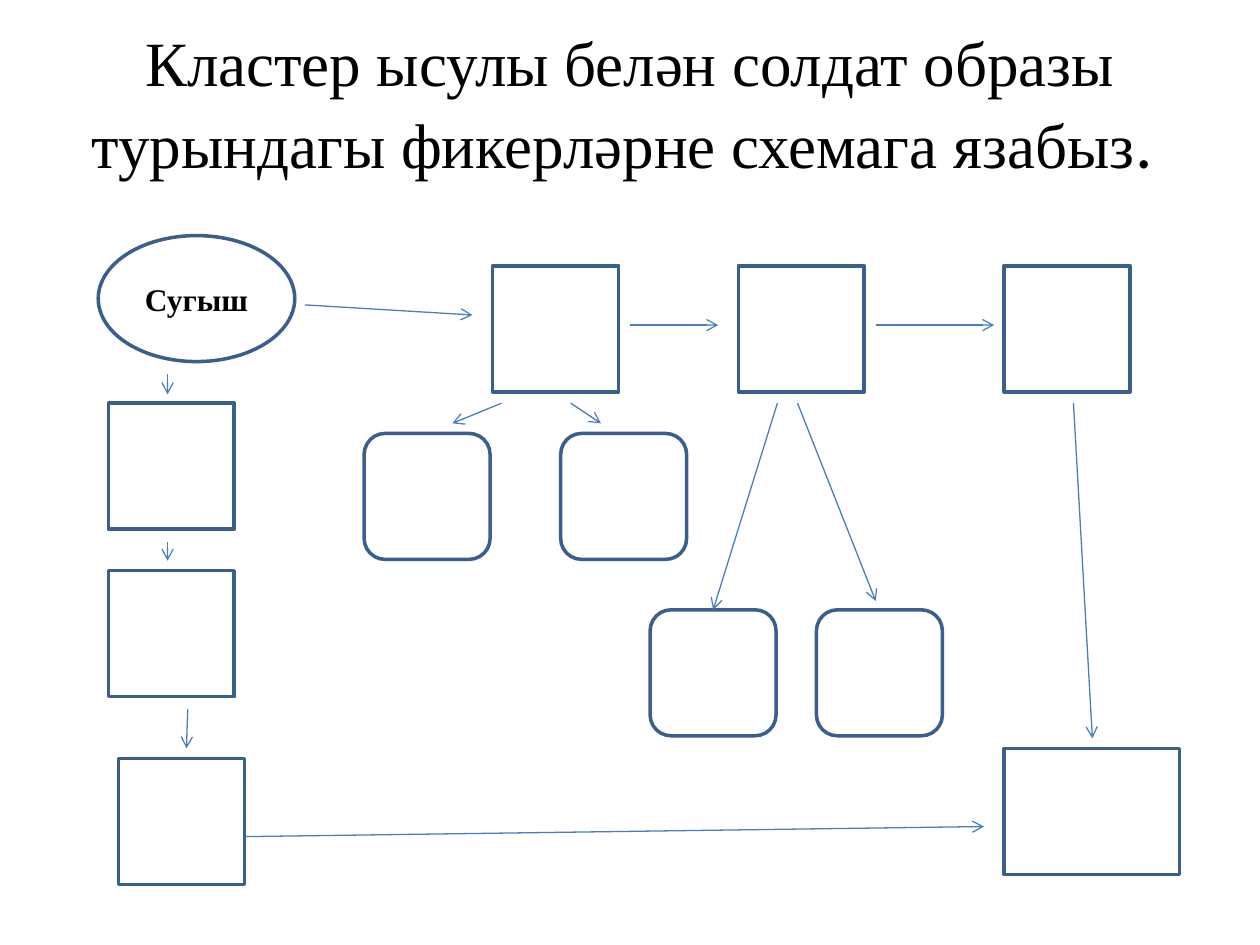
import pptx
import pptx.util
import pptx.dml.color
import pptx.enum.shapes
import pptx.enum.text
import pptx.oxml.ns
from lxml import etree

Inches, Pt = pptx.util.Inches, pptx.util.Pt
SHAPE = pptx.enum.shapes.MSO_SHAPE

COLORS = {"text": "000000", "box": "FFFFFF", "border": "3A5F8C", "arrow": "4B7EBC"}

# Content: runs with their font formats
TITLE_AT = (0.5, 0.3, 9, 1.03)
TITLE = [
    ("Кластер ысулы белән солдат образы турындагы фикерләрне схемага язабыз",
     {"name": "Times New Roman", "size": Pt(36)}),
    (". ", {"name": "Calibri", "size": Pt(39.6)}),
]
TOPIC_AT = (0.78, 1.87, 1.56, 1)
TOPIC = [("Сугыш", {"name": "Times New Roman", "size": Pt(18), "bold": True})]

# Boxes: one-inch squares by left and top, then the wide final box
SIDE = 1
SQUARES = [(3.91, 2.11), (5.86, 2.11), (7.97, 2.11),
           (0.86, 3.2), (0.86, 4.53), (0.94, 6.02)]
ROUNDED = [(2.89, 3.44), (4.45, 3.44), (5.16, 4.84), (6.48, 4.84)]
RESULT_AT = (7.97, 5.94, 1.39, SIDE)

# Arrows: start x, y, end x, y
ARROWS = [
    (2.42, 2.42, 3.75, 2.5), (5, 2.58, 5.7, 2.58), (6.95, 2.58, 7.89, 2.58),
    (1.33, 2.97, 1.33, 3.13), (1.33, 4.3, 1.33, 4.45), (1.49, 5.63, 1.48, 5.94),
    (3.98, 3.2, 3.59, 3.36), (4.53, 3.2, 4.77, 3.36),
    (6.17, 3.2, 5.66, 4.84), (6.33, 3.2, 6.95, 4.77),
    (8.52, 3.2, 8.67, 5.86), (1.95, 6.64, 7.81, 6.56),
]


def rgb(name):
    return pptx.dml.color.RGBColor.from_string(COLORS[name])


def write(sp, runs):
    tf = sp.text_frame
    tf.word_wrap = True
    tf.vertical_anchor = pptx.enum.text.MSO_ANCHOR.MIDDLE
    p = tf.paragraphs[0]
    p.alignment = pptx.enum.text.PP_ALIGN.CENTER
    for text, formats in runs:
        r = p.add_run()
        r.text = text
        r.font.color.rgb = rgb("text")
        for key, value in formats.items():
            setattr(r.font, key, value)


def add_box(s, kind, at):
    sp = s.shapes.add_shape(kind, *map(Inches, at))
    sp.shadow.inherit = False
    sp.fill.solid()
    sp.fill.fore_color.rgb = rgb("box")
    sp.line.color.rgb = rgb("border")
    sp.line.width = Pt(2)
    return sp


def add_arrow(s, ends):
    line = s.shapes.add_connector(
        pptx.enum.shapes.MSO_CONNECTOR.STRAIGHT, *map(Inches, ends))
    line.line.color.rgb = rgb("arrow")
    line.line.width = Pt(0.75)
    qn = pptx.oxml.ns.qn
    etree.SubElement(line.line._get_or_add_ln(), qn("a:tailEnd"), type="arrow")
    etree.SubElement(line._element.spPr, qn("a:effectLst"))


def main():
    prs = pptx.Presentation()
    prs.slide_width, prs.slide_height = Inches(10), Inches(7.5)
    s = prs.slides.add_slide(prs.slide_layouts[6])

    # Title and topic
    write(s.shapes.add_textbox(*map(Inches, TITLE_AT)), TITLE)
    write(add_box(s, SHAPE.OVAL, TOPIC_AT), TOPIC)

    # Empty boxes of the cluster
    for kind, places in ((SHAPE.RECTANGLE, SQUARES), (SHAPE.ROUNDED_RECTANGLE, ROUNDED)):
        for left, top in places:
            add_box(s, kind, (left, top, SIDE, SIDE))
    add_box(s, SHAPE.RECTANGLE, RESULT_AT)

    # Arrows between the boxes
    for ends in ARROWS:
        add_arrow(s, ends)

    prs.save("out.pptx")


if __name__ == "__main__":
    main()
